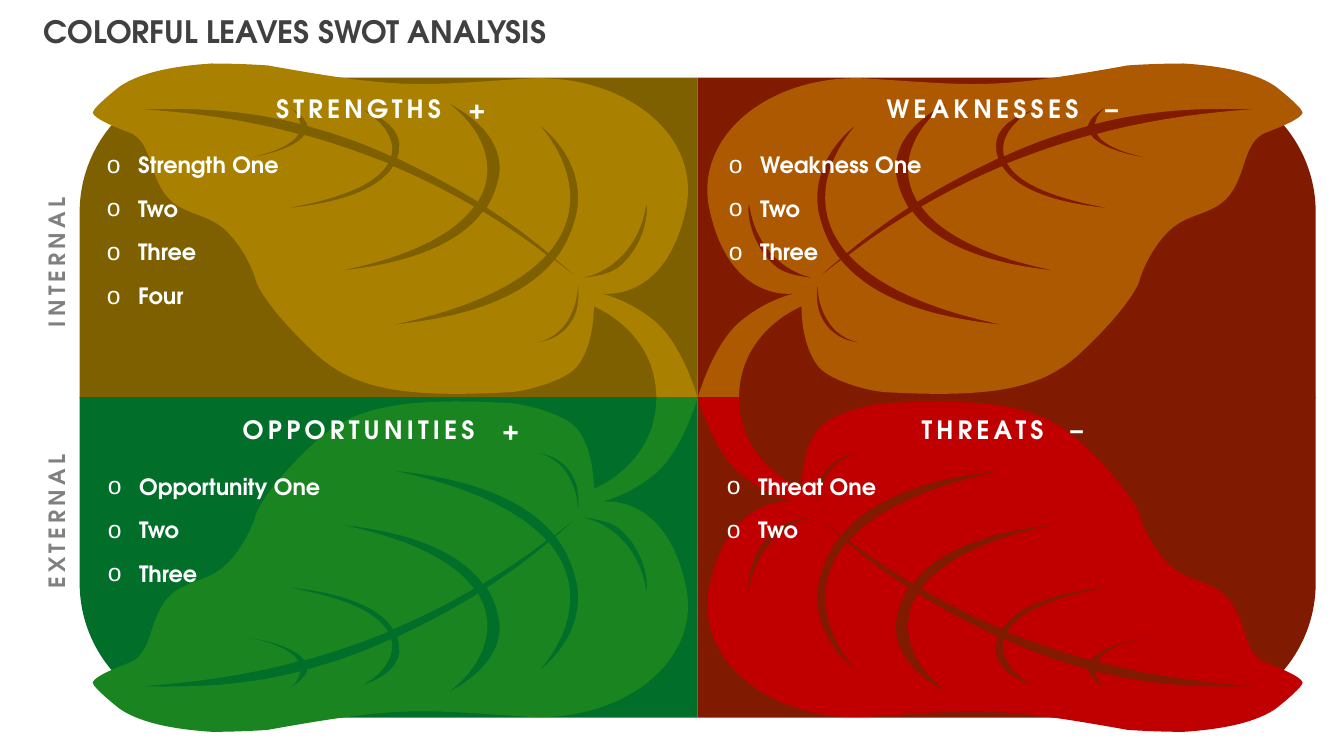
from dataclasses import dataclass

from lxml.etree import SubElement
from pptx import Presentation
from pptx.dml.color import RGBColor
from pptx.enum.shapes import MSO_SHAPE
from pptx.enum.text import MSO_ANCHOR, MSO_AUTO_SIZE, PP_ALIGN
from pptx.oxml.ns import qn
from pptx.util import Inches, Pt


@dataclass(frozen=True)
class Theme:
    font: str = "TeX Gyre Adventor"
    title_size: int = 22
    heading_size: int = 18
    body_size: int = 16
    tracking: int = 3
    sign_gap: int = 11
    title: str = "404040"
    side: str = "808080"
    light: str = "FFFFFF"
    olive: str = "7F6000"
    gold: str = "AA8000"
    maroon: str = "801A00"
    orange: str = "AD5902"
    forest: str = "016F2A"
    green: str = "198420"
    red: str = "C00000"


THEME = Theme()


def prepare_frame(shape, left, top, width, height, align=PP_ALIGN.LEFT):
    """Place a text shape, top-anchored, and return its frame."""
    shape.left, shape.top = Inches(left), Inches(top)
    shape.width, shape.height = Inches(width), Inches(height)
    frame = shape.text_frame
    frame.word_wrap = True
    frame.auto_size = MSO_AUTO_SIZE.SHAPE_TO_FIT_TEXT
    frame.vertical_anchor = MSO_ANCHOR.TOP
    frame.paragraphs[0].alignment = align
    return frame


def add_run(paragraph, text, size, color, tracking=0):
    run = paragraph.add_run()
    run.text = text
    run.font.name = THEME.font
    run.font.size = Pt(size)
    run.font.bold = True
    run.font.color.rgb = RGBColor.from_string(color)
    if tracking:
        run.font._element.set("spc", str(tracking * 100))


# Top-left leaf in inches: a start point, then cubic curves (two controls, end)
LEAF_EDGE = [
    (6.51, 3.2),
    (6.23, 2.96, 5.95, 2.91, 5.95, 2.91), (5.95, 2.91, 6.59, 3.03, 6.8, 2.09),
    (6.89, 1.7, 6.72, 1.35, 6.41, 1.11), (6.11, 0.88, 5.68, 0.75, 5.22, 0.78),
    (4.14, 0.85, 3.99, 0.89, 2.66, 0.65), (2.66, 0.65, 2.41, 0.63, 2.1, 0.63),
    (1.8, 0.65, 1.43, 0.7, 1.2, 0.85), (1.17, 0.87, 0.92, 1.07, 0.92, 1.12),
    (0.94, 1.18, 1.14, 1.26, 1.27, 1.31), (1.55, 1.4, 1.45, 1.84, 1.76, 2.04),
    (1.93, 2.14, 2.06, 2.14, 2.21, 2.26), (2.39, 2.41, 2.51, 2.67, 2.54, 2.79),
    (2.54, 2.79, 2.61, 3.02, 3.11, 3.49), (3.5, 3.86, 3.99, 3.95, 5.07, 3.89),
    (5.2, 3.88, 5.59, 3.79, 5.72, 3.64), (5.9, 3.42, 5.89, 3.04, 5.89, 3.04),
    (5.89, 3.04, 6.51, 3.28, 6.51, 3.95), (6.51, 3.95, 6.92, 3.95, 6.92, 3.95),
    (6.92, 3.95, 6.78, 3.44, 6.51, 3.2),
]
LEAF_VEINS = [
    (5.73, 2.76),
    (5.73, 2.77, 5.73, 2.78, 5.73, 2.78), (5.74, 2.85, 5.75, 3.02, 5.7, 3.13),
    (5.58, 3.4, 5.31, 3.4, 5.27, 3.4), (5.63, 3.38, 5.75, 2.99, 5.73, 2.78),
    (5.73, 2.78, 5.73, 2.77, 5.73, 2.76), (5.65, 2.7, 5.58, 2.64, 5.5, 2.58),
    (5.04, 3.14, 4.08, 3.19, 3.86, 3.23), (4.7, 3.06, 5.17, 2.8, 5.42, 2.53),
    (5.23, 2.38, 5.02, 2.24, 4.79, 2.1), (4.42, 2.6, 3.53, 2.66, 3.36, 2.69),
    (4.11, 2.54, 4.52, 2.3, 4.7, 2.05), (4.46, 1.91, 4.19, 1.77, 3.9, 1.65),
    (3.68, 2, 2.96, 2.05, 2.82, 2.07), (3.45, 1.96, 3.75, 1.8, 3.85, 1.62),
    (3.59, 1.52, 3.32, 1.42, 3.02, 1.34), (2.9, 1.51, 2.45, 1.57, 2.38, 1.58),
    (2.73, 1.52, 2.9, 1.43, 2.96, 1.33), (2.49, 1.2, 1.96, 1.12, 1.37, 1.08),
    (1.8, 1.08, 2.31, 1.06, 2.98, 1.23), (2.97, 1.16, 2.92, 1.09, 2.84, 1.04),
    (2.91, 1.08, 3.04, 1.17, 3.05, 1.25), (3.3, 1.32, 3.58, 1.41, 3.88, 1.55),
    (3.93, 1.37, 3.78, 1.19, 3.59, 1.09), (3.59, 1.09, 3.99, 1.2, 3.96, 1.47),
    (3.96, 1.51, 3.95, 1.54, 3.94, 1.57), (4.06, 1.63, 4.19, 1.69, 4.32, 1.76),
    (4.47, 1.84, 4.61, 1.92, 4.74, 2), (4.97, 1.63, 4.74, 1.23, 4.44, 1.02),
    (4.44, 1.02, 5.02, 1.28, 4.95, 1.74), (4.93, 1.86, 4.89, 1.96, 4.83, 2.06),
    (5.06, 2.21, 5.26, 2.36, 5.44, 2.51), (5.85, 2.03, 5.59, 1.51, 5.35, 1.24),
    (5.35, 1.24, 5.82, 1.57, 5.72, 2.11), (5.68, 2.29, 5.61, 2.44, 5.51, 2.57),
    (5.59, 2.63, 5.66, 2.7, 5.73, 2.76), (5.94, 2.75, 6.34, 2.54, 6.41, 2.02),
    (6.43, 2.07, 6.42, 2.41, 6.14, 2.65), (6.01, 2.75, 5.73, 2.76, 5.73, 2.76),
]
MIRROR_X, MIRROR_Y = 13.84, 7.89  # sum of a coordinate and its reflection

# column, row, heading, sign, panel colour, leaf colour, list left, items
QUADRANTS = [
    (0, 0, "STRENGTHS", "+", THEME.olive, THEME.gold, 0.96,
     ["Strength One", "Two", "Three", "Four"]),
    (1, 0, "WEAKNESSES", "–", THEME.maroon, THEME.orange, 7.13,
     ["Weakness One", "Two", "Three"]),
    (0, 1, "OPPORTUNITIES", "+", THEME.forest, THEME.green, 0.97,
     ["Opportunity One", "Two", "Three"]),
    (1, 1, "THREATS", "–", THEME.maroon, THEME.red, 7.11,
     ["Threat One", "Two"]),
]
PANEL_WIDTH, PANEL_HEIGHT = 6.13, 3.18

deck = Presentation()
deck.slide_width, deck.slide_height = Inches(13.33), Inches(7.5)
slide = deck.slides.add_slide(deck.slide_layouts[4])
shapes = slide.shapes
title, *lists = list(slide.placeholders)[:5]

title_frame = prepare_frame(title, 0.33, 0.08, 7.42, 0.47)
add_run(title_frame.paragraphs[0], "COLORFUL LEAVES SWOT ANALYSIS",
        THEME.title_size, THEME.title)

for quadrant, item_list in zip(QUADRANTS, lists):
    column, row, heading, sign, panel_color, leaf_color, list_left, items = quadrant

    panel = shapes.add_shape(
        MSO_SHAPE.ROUND_1_RECTANGLE,
        Inches(0.79 + column * PANEL_WIDTH), Inches(0.77 + row * 3.17),
        Inches(PANEL_WIDTH), Inches(PANEL_HEIGHT))
    panel.adjustments[0] = 0.42
    panel._element.spPr.xfrm.set("flipH", str(1 - column))
    panel._element.spPr.xfrm.set("flipV", str(row))

    outline = None
    for contour in (LEAF_EDGE, LEAF_VEINS):
        numbers = [number for piece in contour for number in piece]
        points = [(Inches(MIRROR_X - x if column else x),
                   Inches(MIRROR_Y - y if row else y))
                  for x, y in zip(numbers[::2], numbers[1::2])]
        if outline is None:
            outline = shapes.build_freeform(*points[0])
        else:
            outline.move_to(*points[0])
        outline.add_line_segments(points[1:], close=True)
    leaf = outline.convert_to_shape()

    # Every three consecutive points become one cubic curve
    leaf_path = next(leaf._element.iter(qn("a:path")))
    segments = leaf_path.findall(qn("a:lnTo"))
    for first in range(0, len(segments), 3):
        curve = SubElement(leaf_path, qn("a:cubicBezTo"))
        segments[first].addprevious(curve)
        for segment in segments[first:first + 3]:
            curve.append(segment[0])
            leaf_path.remove(segment)

    for area, color in ((panel, panel_color), (leaf, leaf_color)):
        area.shadow.inherit = False
        area.fill.solid()
        area.fill.fore_color.rgb = RGBColor.from_string(color)
        area.line.fill.background()

    heading_box = shapes.add_textbox(0, 0, 0, 0)
    heading_line = prepare_frame(heading_box, 0.79 + column * 6.16, 0.88 + row * PANEL_HEIGHT,
                                 5.98, 0.4, PP_ALIGN.CENTER).paragraphs[0]
    for text, tracking in ((heading, THEME.tracking), (" ", THEME.sign_gap),
                           (sign, THEME.tracking)):
        add_run(heading_line, text, THEME.heading_size, THEME.light, tracking)

    shapes._spTree.append(item_list._element)  # bring the list above its leaf
    list_frame = prepare_frame(item_list, list_left, 1.45 + row * 3.19,
                               5.83, 0.43 * len(items) - 0.05)
    for index, item in enumerate(items):
        entry = list_frame.add_paragraph() if index else list_frame.paragraphs[0]
        entry.space_before, entry.space_after = Pt(0), Pt(12)
        properties = entry._p.get_or_add_pPr()
        properties.set("marL", str(Inches(0.31)))
        properties.set("indent", str(-Inches(0.31)))
        bullet_color = SubElement(properties, qn("a:buClr"))
        SubElement(bullet_color, qn("a:srgbClr"), val=THEME.light)
        SubElement(properties, qn("a:buSzPct"), val="110000")
        SubElement(properties, qn("a:buChar"), char="o")
        add_run(entry, item, THEME.body_size, THEME.light)

for side, top in (("INTERNAL", 2.42), ("EXTERNAL", 4.99)):
    side_box = shapes.add_textbox(0, 0, 0, 0)
    side_box.rotation = 270
    side_frame = prepare_frame(side_box, -0.54, top, 2.2, 0.37, PP_ALIGN.CENTER)
    add_run(side_frame.paragraphs[0], side, THEME.body_size, THEME.side, THEME.tracking)

deck.save("out.pptx")
